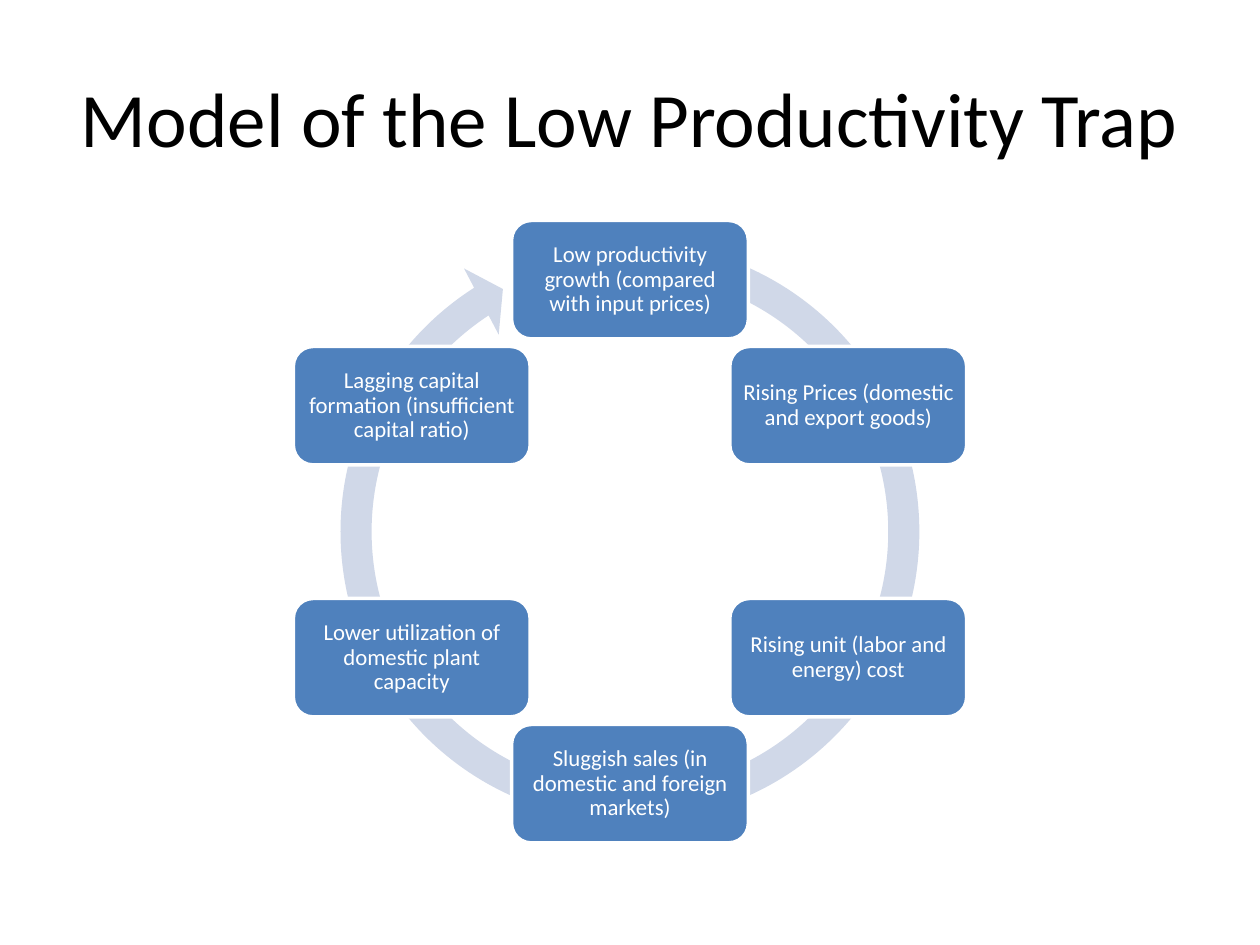
from math import cos, radians, sin

from pptx import Presentation
from pptx.dml.color import RGBColor
from pptx.enum.shapes import MSO_SHAPE
from pptx.enum.text import MSO_ANCHOR, PP_ALIGN
from pptx.util import Inches, Pt

BLACK = RGBColor(0x00, 0x00, 0x00)
WHITE = RGBColor(0xFF, 0xFF, 0xFF)
BLUE = RGBColor(0x4F, 0x81, 0xBD)
PALE = RGBColor(0xD0, 0xD8, 0xE8)
ARROW = MSO_SHAPE.CIRCULAR_ARROW
ROUND = MSO_SHAPE.ROUNDED_RECTANGLE
MIDDLE = MSO_ANCHOR.MIDDLE
CENTER = PP_ALIGN.CENTER

MID_X, MID_Y, RADIUS = 5, 4.22, 2
RING = 4.94
BOX_W, BOX_H = 1.88, 0.94
BEND = (0.05, 3.13, 142.29, 171.27, 0.06)
STEPS = (
    "Low productivity growth (compared with input prices)",
    "Rising Prices (domestic and export goods)",
    "Rising unit (labor and energy) cost",
    "Sluggish sales (in domestic and foreign markets)",
    "Lower utilization of domestic plant capacity",
    "Lagging capital formation (insufficient capital ratio)",
)


class Deck:
    """Hold the style and the current slide, and draw each kind of element."""

    def __init__(self, slide, face="Calibri"):
        self.slide = slide
        self.face = face

    def label(self, shape, text, size, color):
        frame = shape.text_frame
        frame.text = text
        frame.word_wrap = True
        frame.vertical_anchor = MIDDLE
        para = frame.paragraphs[0]
        para.alignment = CENTER
        para.font.name = self.face
        para.font.size = Pt(size)
        para.font.color.rgb = color
        return frame

    def title(self, text):
        shape = self.slide.shapes.title
        shape.left, shape.top = Inches(0.5), Inches(0.3)
        shape.width, shape.height = Inches(9), Inches(1.25)
        self.label(shape, text, 44, BLACK)

    def shape(self, kind, x, y, width, height, fill):
        shape = self.slide.shapes.add_shape(
            kind, Inches(x - width / 2), Inches(y - height / 2),
            Inches(width), Inches(height))
        shape.shadow.inherit = False
        shape.fill.solid()
        shape.fill.fore_color.rgb = fill
        return shape

    def ring(self):
        ring = self.shape(ARROW, MID_X, MID_Y, RING, RING, PALE)
        ring.line.fill.background()
        for i, value in enumerate(BEND):
            ring.adjustments[i] = value

    def step(self, x, y, text):
        box = self.shape(ROUND, x, y, BOX_W, BOX_H, BLUE)
        box.line.color.rgb = WHITE
        box.line.width = Pt(2)
        frame = self.label(box, text, 13, WHITE)
        frame.paragraphs[0].line_spacing = 0.9
        frame.margin_left = frame.margin_right = Inches(0.05)
        frame.margin_top = frame.margin_bottom = Inches(0.05)


def main():
    show = Presentation()
    show.slide_width, show.slide_height = Inches(10), Inches(7.5)
    deck = Deck(show.slides.add_slide(show.slide_layouts[5]))
    deck.title("Model of the Low Productivity Trap")
    deck.ring()
    for i, text in enumerate(STEPS):
        turn = radians(i * 360 / len(STEPS))
        deck.step(MID_X + RADIUS * sin(turn), MID_Y - RADIUS * cos(turn), text)
    show.save("out.pptx")


if __name__ == "__main__":
    main()
